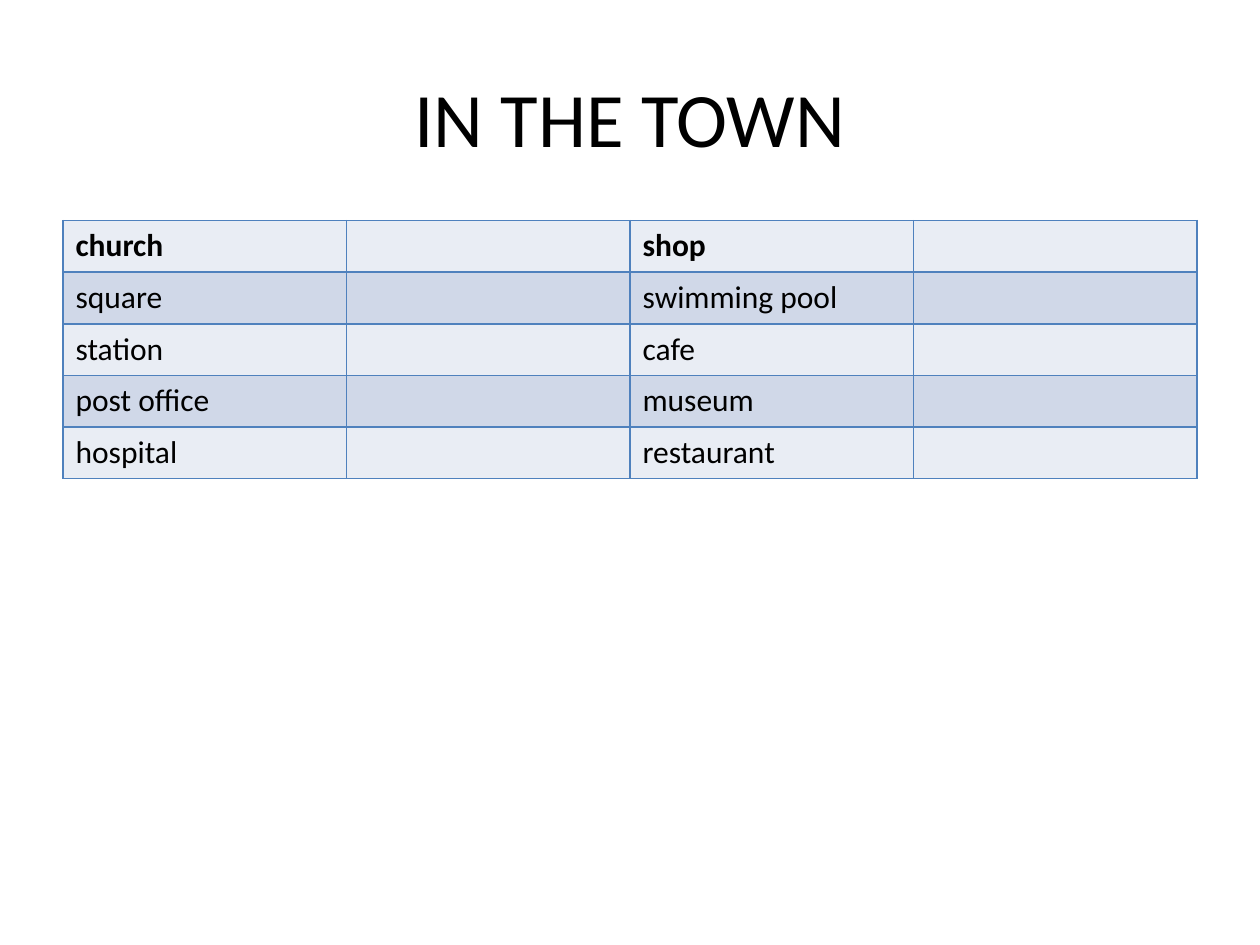
from lxml.etree import SubElement
from pptx import Presentation
from pptx.dml.color import RGBColor as RGB
from pptx.enum.text import MSO_ANCHOR, PP_ALIGN
from pptx.oxml.ns import qn
from pptx.util import Inches, Pt

TITLE = "IN THE TOWN"
WORDS = [
    ("church", "", "shop", ""),
    ("square", "", "swimming pool", ""),
    ("station", "", "cafe", ""),
    ("post office", "", "museum", ""),
    ("hospital", "", "restaurant", ""),
]
COLORS = {"text": "000000", "border": "4F81BD", "light": "E9EDF4", "dark": "D0D8E8"}
FONT = "Calibri"
LEFT, WIDTH = 0.5, 9
TABLE_TOP, ROW_HEIGHT = 1.75, 0.41


def set_font(p, size, bold=False):
    p.font.name = FONT
    p.font.size = Pt(size)
    p.font.bold = bold
    p.font.color.rgb = RGB.from_string(COLORS["text"])


def add_borders(cell):
    tc_pr = cell._tc.get_or_add_tcPr()
    for i, side in enumerate(("lnL", "lnR", "lnT", "lnB")):
        ln = tc_pr.makeelement(qn(f"a:{side}"), {"w": str(Pt(1))})
        fill = SubElement(ln, qn("a:solidFill"))
        SubElement(fill, qn("a:srgbClr"), val=COLORS["border"])
        tc_pr.insert(i, ln)  # borders come before the cell fill


prs = Presentation()
prs.slide_width, prs.slide_height = Inches(10), Inches(7.5)
s = prs.slides.add_slide(prs.slide_layouts[5])

# Title
title = s.shapes.title
title.left, title.top = Inches(LEFT), Inches(0.3)
title.width, title.height = Inches(WIDTH), Inches(1.25)
tf = title.text_frame
tf.text = TITLE
tf.vertical_anchor = MSO_ANCHOR.MIDDLE
tf.paragraphs[0].alignment = PP_ALIGN.CENTER
set_font(tf.paragraphs[0], 44)

# Vocabulary table
rows, cols = len(WORDS), len(WORDS[0])
table = s.shapes.add_table(rows, cols, Inches(LEFT), Inches(TABLE_TOP),
                           Inches(WIDTH), Inches(ROW_HEIGHT * rows)).table
for r, words in enumerate(WORDS):
    for c, word in enumerate(words):
        cell = table.cell(r, c)
        cell.text = word
        set_font(cell.text_frame.paragraphs[0], 18, bold=r == 0)
        cell.fill.solid()
        cell.fill.fore_color.rgb = RGB.from_string(COLORS["dark" if r % 2 else "light"])
        add_borders(cell)

prs.save("out.pptx")
